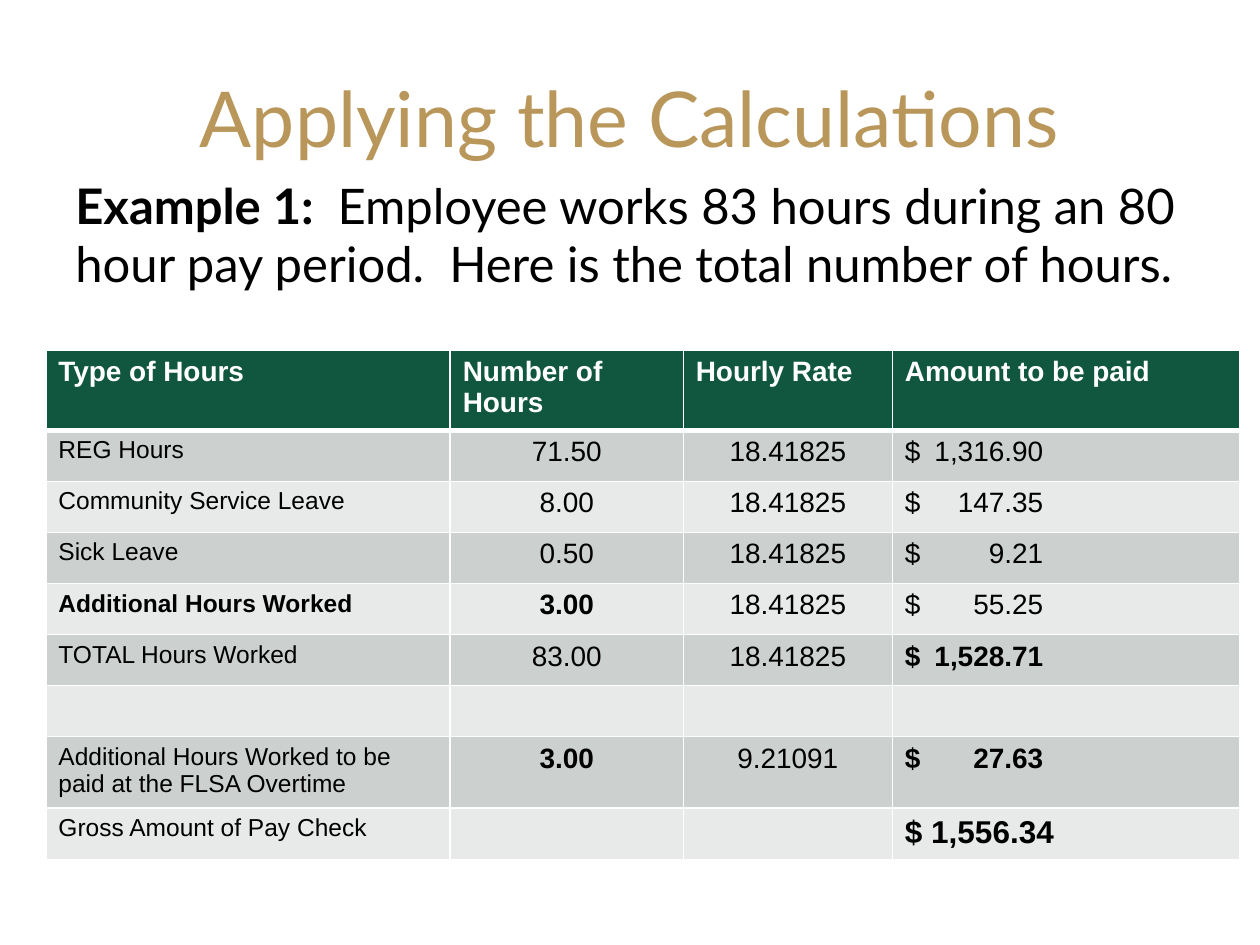
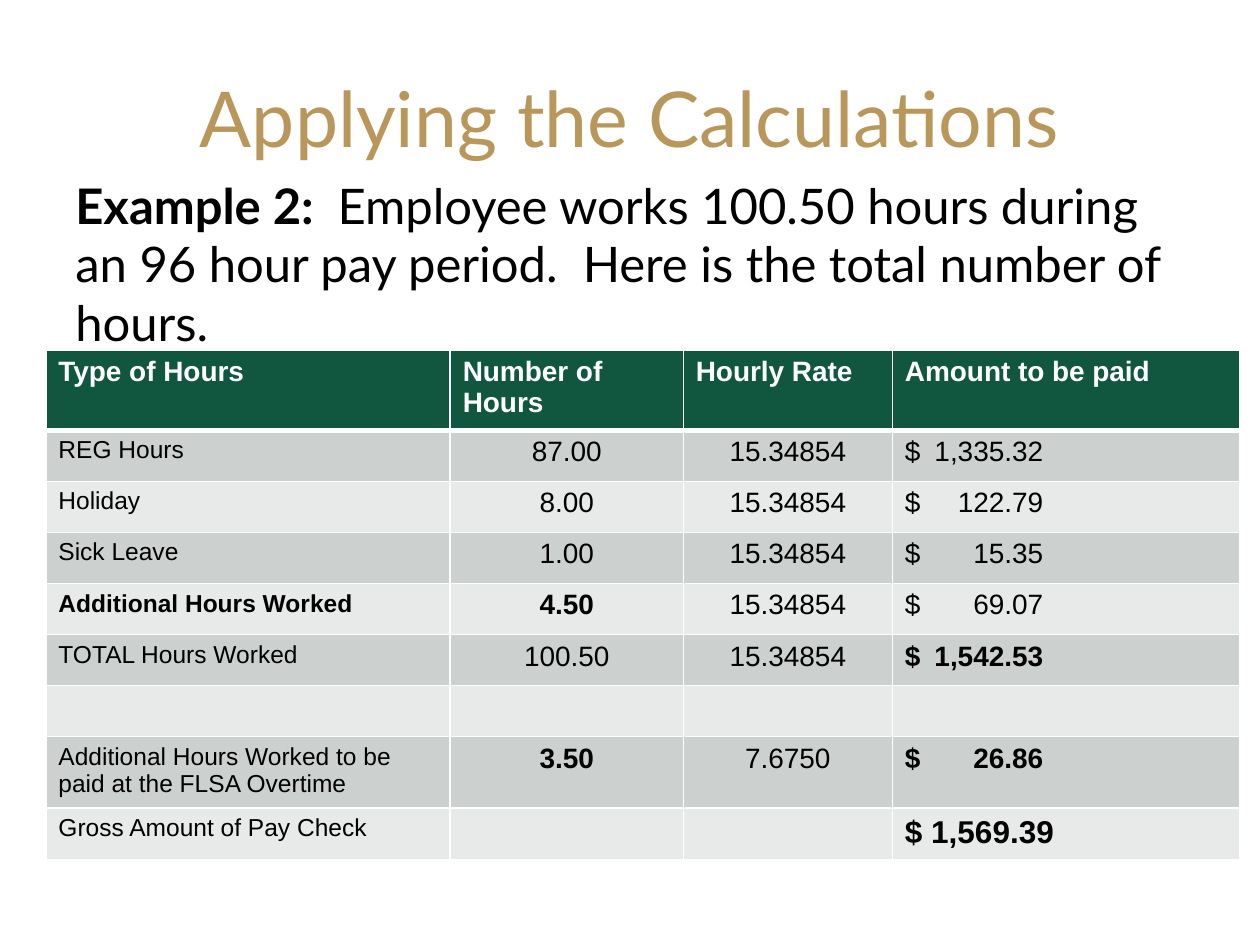
from dataclasses import dataclass

from lxml.etree import SubElement
from pptx import Presentation
from pptx.dml.color import RGBColor
from pptx.enum.text import MSO_ANCHOR, PP_ALIGN
from pptx.oxml.ns import qn
from pptx.util import Pt


@dataclass(frozen=True)
class Theme:
    gold: str = "B9975B"
    green: str = "115740"
    black: str = "000000"
    white: str = "FFFFFF"
    bands: tuple = ("CCD1CF", "E7EAE8")
    slide_font: str = "Lato"
    table_font: str = "Arial"
    title_size: int = 44
    example_size: int = 28
    label_size: int = 14
    value_size: int = 16
    gross_size: int = 18


THEME = Theme()
COLUMN_WIDTHS = (231.1, 133.2, 119.5, 198.7)
HEADER_HEIGHT, ROW_HEIGHT = 26.6, 29.2
AMOUNT_TAB = 79
HEADINGS = ("Type of Hours", "Number of Hours", "Hourly Rate", "Amount to be paid")
OVERTIME = "Additional Hours Worked to be paid at the FLSA Overtime"
BOLD_CELLS = {(4, 0), (4, 1), (5, 3), (7, 1), (7, 3), (8, 3)}


def style(font, name, size, color, bold=False):
    font.name, font.size, font.bold = name, Pt(size), bold
    font.color.rgb = RGBColor.from_string(color)


def add_text(slide, top, height, anchor, align, size, color, *pieces):
    box = slide.shapes.add_textbox(Pt(36), Pt(top), Pt(648), Pt(height))
    frame = box.text_frame
    frame.word_wrap = True
    frame.vertical_anchor = anchor
    paragraph = frame.paragraphs[0]
    paragraph.alignment = align
    for words, bold in pieces:
        run = paragraph.add_run()
        run.text = words
        style(run.font, THEME.slide_font, size, color, bold)


def set_borders(cell, top, bottom):
    properties = cell._tc.get_or_add_tcPr()
    for side, width in (("L", 1), ("R", 1), ("T", top), ("B", bottom)):
        line = SubElement(properties, qn(f"a:ln{side}"), w=str(Pt(width)))
        fill = SubElement(line, qn("a:solidFill"))
        SubElement(fill, qn("a:srgbClr"), val=THEME.white)


def set_right_tab(paragraph, position):
    stops = SubElement(paragraph._p.get_or_add_pPr(), qn("a:tabLst"))
    SubElement(stops, qn("a:tab"), pos=str(Pt(position)), algn="r")


def fill_cell(cell, row, column, words):
    header = row == 0
    set_borders(cell, top=3 if row == 1 else 1, bottom=3 if header else 1)
    cell.fill.solid()
    band = THEME.green if header else THEME.bands[(row - 1) % 2]
    cell.fill.fore_color.rgb = RGBColor.from_string(band)
    if not words:
        return
    cell.text_frame.text = words
    paragraph = cell.text_frame.paragraphs[0]
    if "\t" in words:
        set_right_tab(paragraph, AMOUNT_TAB)
    paragraph.alignment = PP_ALIGN.CENTER if not header and column in (1, 2) else PP_ALIGN.LEFT
    size = THEME.value_size
    if not header and column == 0:
        size = THEME.label_size
    elif (row, column) == (8, 3):
        size = THEME.gross_size
    color = THEME.white if header else THEME.black
    style(paragraph.runs[0].font, THEME.table_font, size, color,
          header or (row, column) in BOLD_CELLS)


def add_pay_table(slide, rows):
    height = HEADER_HEIGHT + ROW_HEIGHT * (len(rows) - 1)
    table = slide.shapes.add_table(len(rows), len(HEADINGS), Pt(26.2), Pt(200.2),
                                   Pt(sum(COLUMN_WIDTHS)), Pt(height)).table
    table.horz_banding = False
    for column, width in zip(table.columns, COLUMN_WIDTHS):
        column.width = Pt(width)
    for index, row in enumerate(rows):
        table.rows[index].height = Pt(ROW_HEIGHT if index else HEADER_HEIGHT)
        for column, words in enumerate(row):
            fill_cell(table.cell(index, column), index, column, words)


def pay_rows(rate, hours, overtime, gross):
    regular = [(label, worked, rate, f"$\t{amount}") for label, worked, amount in hours]
    worked, overtime_rate, amount = overtime
    return [HEADINGS, *regular, ("",) * 4,
            (OVERTIME, worked, overtime_rate, f"$\t{amount}"),
            ("Gross Amount of Pay Check", "", "", f"$ {gross}")]


def add_example(deck, label, situation, rows):
    slide = deck.slides.add_slide(deck.slide_layouts[6])
    add_text(slide, 21.6, 90, MSO_ANCHOR.MIDDLE, PP_ALIGN.CENTER,
             THEME.title_size, THEME.gold, ("Applying the Calculations", False))
    add_text(slide, 96.5, 386, MSO_ANCHOR.TOP, PP_ALIGN.LEFT,
             THEME.example_size, THEME.black, (f"{label}:  ", True),
             (f"{situation}  Here is the total number of hours.", False))
    add_pay_table(slide, rows)


def main():
    """Build the two overtime pay examples."""
    deck = Presentation()
    deck.slide_width, deck.slide_height = Pt(720), Pt(540)
    add_example(
        deck, "Example 1", "Employee works 83 hours during an 80 hour pay period.",
        pay_rows("18.41825", [
            ("REG Hours", "71.50", "1,316.90"),
            ("Community Service Leave", "8.00", "147.35"),
            ("Sick Leave", "0.50", "9.21"),
            ("Additional Hours Worked", "3.00", "55.25"),
            ("TOTAL Hours Worked", "83.00", "1,528.71"),
        ], ("3.00", "9.21091", "27.63"), "1,556.34"))
    add_example(
        deck, "Example 2", "Employee works 100.50 hours during an 96 hour pay period.",
        pay_rows("15.34854", [
            ("REG Hours", "87.00", "1,335.32"),
            ("Holiday", "8.00", "122.79"),
            ("Sick Leave", "1.00", "15.35"),
            ("Additional Hours Worked", "4.50", "69.07"),
            ("TOTAL Hours Worked", "100.50", "1,542.53"),
        ], ("3.50", "7.6750", "26.86"), "1,569.39"))
    deck.save("out.pptx")


if __name__ == "__main__":
    main()
